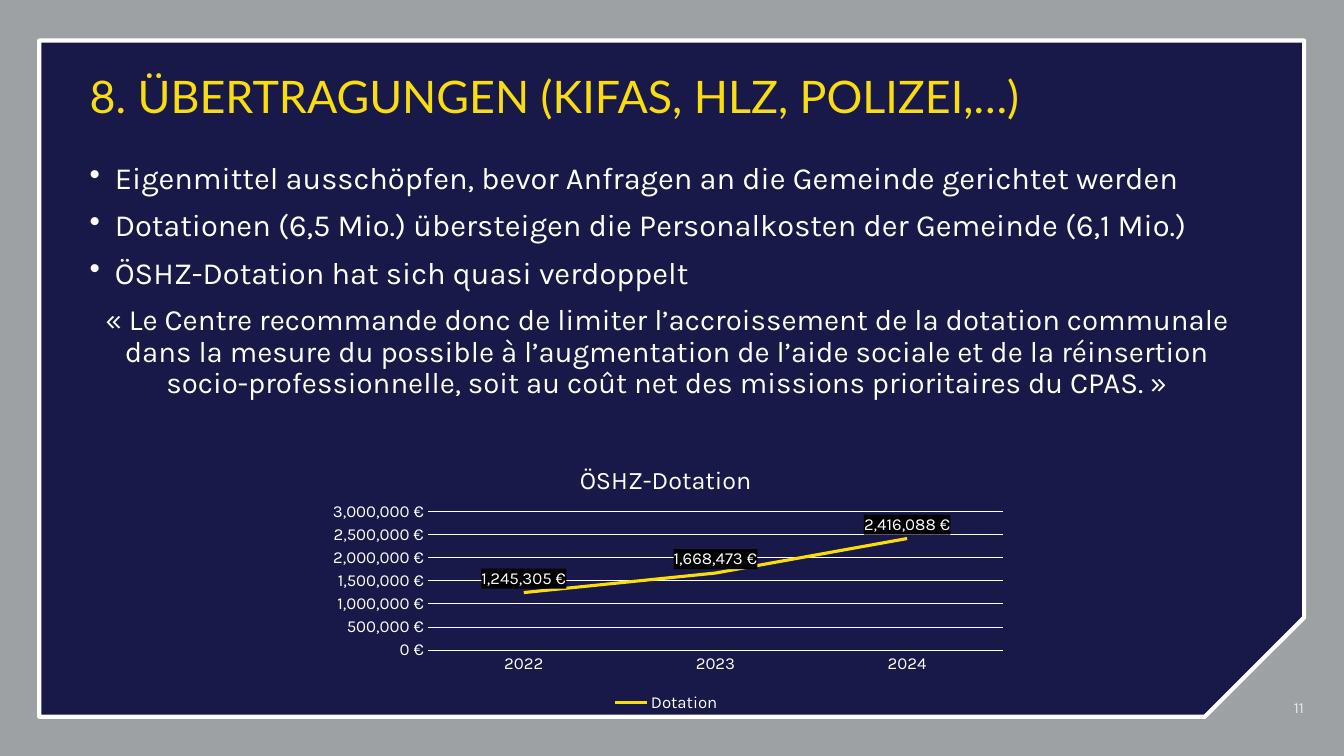
import lxml.etree
import pptx
import pptx.chart.data
import pptx.dml.color
import pptx.enum.chart
import pptx.enum.shapes
import pptx.enum.text
import pptx.oxml
import pptx.oxml.ns
import pptx.util

Pt = pptx.util.Pt
ALIGN = pptx.enum.text.PP_ALIGN
ANCHOR = pptx.enum.text.MSO_ANCHOR
GREY, NAVY, WHITE, YELLOW, PALE = "9EA1A3", "181849", "FFFFFF", "F9DD0F", "E6E7E8"
EURO_FORMAT = '#,##0\\ "€"'


def color(hex_string):
    return pptx.dml.color.RGBColor.from_string(hex_string)


def paint(fill, hex_string):
    fill.solid()
    fill.fore_color.rgb = color(hex_string)


def style_font(font, size, name="Karla", hex_string=WHITE):
    font.size = Pt(size)
    font.name = name
    font.bold = False
    font.color.rgb = color(hex_string)


def write_text(paragraph, text, size=22, font="Karla", hex_string=WHITE,
               align=ALIGN.LEFT, line_spacing=None, space_before=0, bullet=None):
    run = paragraph.add_run()
    run.text = text
    style_font(run.font, size, font, hex_string)
    paragraph.alignment = align
    paragraph.space_before = Pt(space_before)
    if line_spacing:
        paragraph.line_spacing = line_spacing
    if bullet:
        properties = paragraph._p.get_or_add_pPr()
        properties.set("marL", str(Pt(18)))
        properties.set("indent", str(-Pt(18)))
        mark = lxml.etree.SubElement(properties, pptx.oxml.ns.qn("a:buChar"))
        mark.set("char", bullet)


def add_text_frame(slide, box, anchor=ANCHOR.TOP):
    frame = slide.shapes.add_textbox(*map(Pt, box)).text_frame
    frame.word_wrap = True
    frame.vertical_anchor = anchor
    return frame


def add_panel(slide, box):
    panel = slide.shapes.add_shape(
        pptx.enum.shapes.MSO_SHAPE.SNIP_1_RECTANGLE, *map(Pt, box))
    panel.adjustments[0] = 0.147
    panel.rotation = 180
    panel._element.spPr.xfrm.set("flipH", "1")
    panel.shadow.inherit = False
    paint(panel.fill, NAVY)
    panel.line.color.rgb = color(WHITE)
    panel.line.width = Pt(3)


def add_title(slide, box, text):
    frame = add_text_frame(slide, box, ANCHOR.MIDDLE)
    write_text(frame.paragraphs[0], text, size=32, font="Lato",
               hex_string=YELLOW, line_spacing=0.9)


def add_body(slide, box, points, quote):
    frame = add_text_frame(slide, box)
    paragraph = frame.paragraphs[0]
    for point in points:
        write_text(paragraph, point, line_spacing=0.9, space_before=10, bullet="•")
        paragraph = frame.add_paragraph()
    write_text(paragraph, quote, size=21, align=ALIGN.CENTER,
               line_spacing=0.9, space_before=10)


def add_page_number(slide, box, number):
    frame = add_text_frame(slide, box, ANCHOR.BOTTOM)
    frame.margin_left = frame.margin_top = Pt(11.5)
    frame.margin_right = frame.margin_bottom = 0
    write_text(frame.paragraphs[0], number, size=11, hex_string=PALE, align=ALIGN.RIGHT)


def make_layout(inner=False, **fractions):
    target = '<c:layoutTarget val="inner"/>' if inner else ""
    modes = "".join(f'<c:{key}Mode val="edge"/>' for key in fractions if key in "xy")
    values = "".join(f'<c:{key} val="{value}"/>' for key, value in fractions.items())
    return pptx.oxml.parse_xml(
        f'<c:layout {pptx.oxml.ns.nsdecls("c")}><c:manualLayout>'
        f"{target}{modes}{values}</c:manualLayout></c:layout>")


def place_plot(chart):
    plot_area = chart._chartSpace.chart.plotArea
    for layout in plot_area.findall(pptx.oxml.ns.qn("c:layout")):
        plot_area.remove(layout)
    plot_area.insert(0, make_layout(inner=True, x=0.16, y=0.26, w=0.82, h=0.5))


def style_chart_title(chart, text):
    chart.has_title = True
    write_text(chart.chart_title.text_frame.paragraphs[0], text, size=18, align=None)
    title = chart.chart_title._element
    for layout in title.findall(pptx.oxml.ns.qn("c:layout")):
        title.remove(layout)
    title.find(pptx.oxml.ns.qn("c:tx")).addnext(make_layout(x=0.37, y=0.07))
    chart.chart_title.include_in_layout = False


def style_axes(chart):
    for axis in (chart.category_axis, chart.value_axis):
        axis.major_tick_mark = axis.minor_tick_mark = pptx.enum.chart.XL_TICK_MARK.NONE
        style_font(axis.tick_labels.font, 12)
    values = chart.value_axis
    values.minimum_scale, values.maximum_scale, values.major_unit = 0, 3000000, 500000
    values.tick_labels.number_format = EURO_FORMAT
    values.tick_labels.number_format_is_linked = False
    values.format.line.fill.background()
    for line in (chart.category_axis.format.line, values.major_gridlines.format.line):
        line.color.rgb = color(WHITE)
        line.width = Pt(0.75)


def style_series(series):
    series.smooth = False
    series.format.line.color.rgb = color(YELLOW)
    series.format.line.width = Pt(2.25)
    series.marker.style = pptx.enum.chart.XL_MARKER_STYLE.NONE
    labels = series.data_labels
    labels.show_value = True
    labels.position = pptx.enum.chart.XL_LABEL_POSITION.ABOVE
    labels.number_format = EURO_FORMAT
    labels.number_format_is_linked = False
    style_font(labels.font, 12)
    background = pptx.oxml.parse_xml(
        f'<c:spPr {pptx.oxml.ns.nsdecls("c", "a")}><a:solidFill>'
        '<a:srgbClr val="000000"/></a:solidFill></c:spPr>')
    labels._element.find(pptx.oxml.ns.qn("c:numFmt")).addnext(background)


def add_grant_chart(slide, box, grants):
    data = pptx.chart.data.CategoryChartData(number_format=EURO_FORMAT)
    data.categories = list(grants)
    data.add_series("Dotation", list(grants.values()))
    chart = slide.shapes.add_chart(
        pptx.enum.chart.XL_CHART_TYPE.LINE, *map(Pt, box), data).chart
    style_font(chart.font, 10)
    chart.plots[0].vary_by_categories = False
    style_chart_title(chart, "ÖSHZ-Dotation")
    style_axes(chart)
    style_series(chart.plots[0].series[0])
    chart.has_legend = True
    chart.legend.position = pptx.enum.chart.XL_LEGEND_POSITION.BOTTOM
    chart.legend.include_in_layout = False
    style_font(chart.legend.font, 12)
    place_plot(chart)


def build_transfers_slide(presentation):
    slide = presentation.slides.add_slide(presentation.slide_layouts[6])
    paint(slide.background.fill, GREY)
    add_panel(slide, (28, 29, 903.5, 483))
    add_body(slide, (57, 113, 839, 178.5), [
        "Eigenmittel ausschöpfen, bevor Anfragen an die Gemeinde gerichtet werden",
        "Dotationen (6,5 Mio.) übersteigen die Personalkosten der Gemeinde (6,1 Mio.)",
        "ÖSHZ-Dotation hat sich quasi verdoppelt",
    ], "« Le Centre recommande donc de limiter l’accroissement de la dotation "
       "communale dans la mesure du possible à l’augmentation de l’aide sociale et de "
       "la réinsertion socio-professionnelle, soit au coût net des missions "
       "prioritaires du CPAS. »")
    add_page_number(slide, (862.5, 443, 69, 69), "11")
    add_title(slide, (57, 42.5, 847, 57), "8. ÜBERTRAGUNGEN (KIFAS, HLZ, POLIZEI,…)")
    add_grant_chart(slide, (225.5, 314, 501, 198),
                    {"2022": 1245305, "2023": 1668473, "2024": 2416088})


def main():
    presentation = pptx.Presentation()
    presentation.slide_width, presentation.slide_height = Pt(960), Pt(540)
    build_transfers_slide(presentation)
    presentation.save("out.pptx")


if __name__ == "__main__":
    main()
